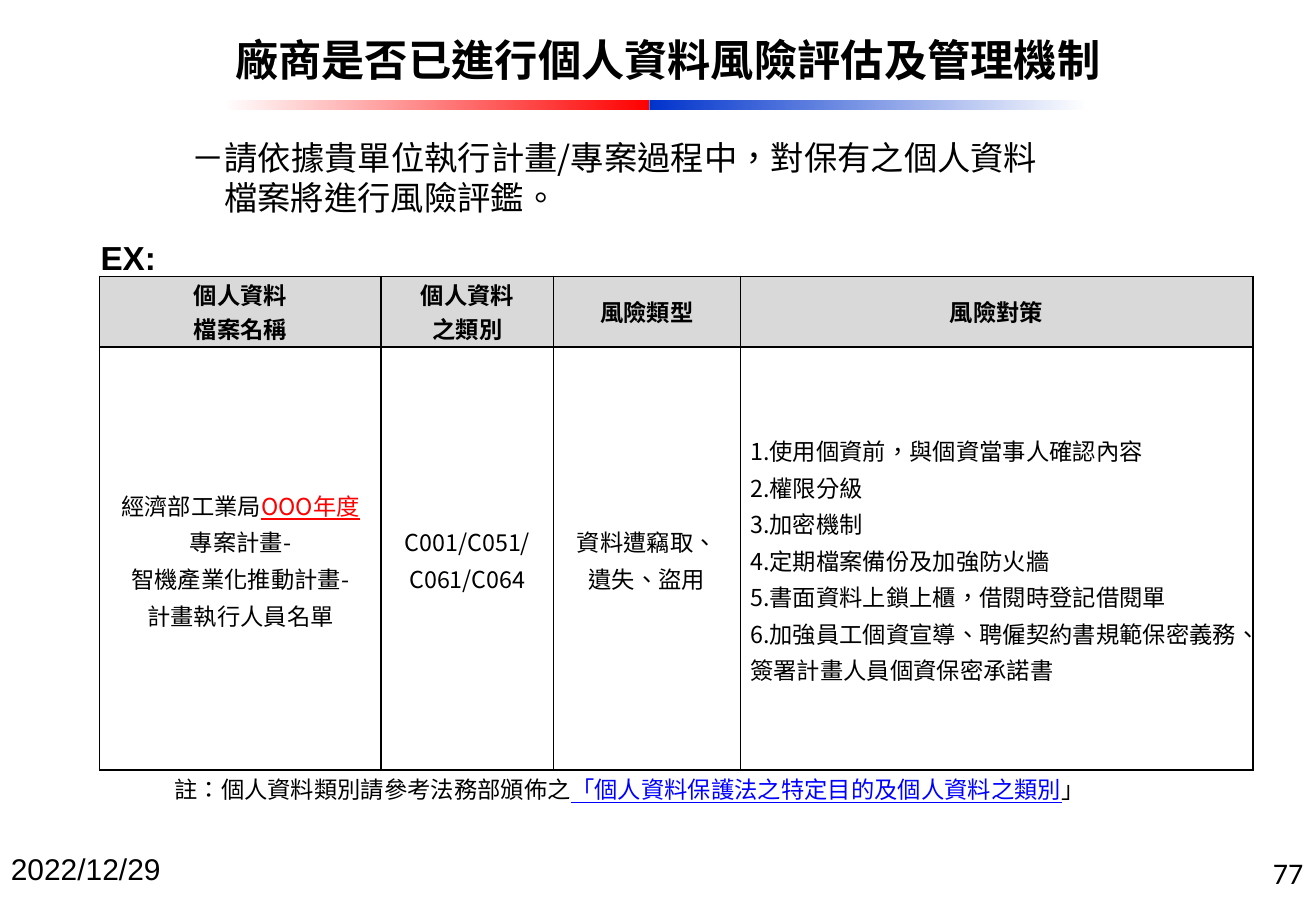
from lxml import etree
from pptx import Presentation
from pptx.dml.color import RGBColor
from pptx.enum.shapes import MSO_SHAPE
from pptx.enum.text import MSO_ANCHOR, PP_ALIGN
from pptx.oxml.ns import qn
from pptx.util import Pt

PX = 7620  # EMU per px, 120 px to the inch
BLACK = RGBColor(0x00, 0x00, 0x00)
WHITE = RGBColor(0xFF, 0xFF, 0xFF)
RED = RGBColor(0xFF, 0x00, 0x00)
NAVY = RGBColor(0x00, 0x33, 0xCC)
BLUE = RGBColor(0x00, 0x00, 0xFF)
GREY = RGBColor(0xD9, 0xD9, 0xD9)
LEFT, MID, RIGHT = PP_ALIGN.LEFT, PP_ALIGN.CENTER, PP_ALIGN.RIGHT
CENTER = MSO_ANCHOR.MIDDLE
RECT = MSO_SHAPE.RECTANGLE
CJK, ARIAL, CALIBRI = "Noto Sans CJK SC", "Arial", "Calibri"

HEAD = [["個人資料", "檔案名稱"], ["個人資料", "之類別"], ["風險類型"], ["風險對策"]]
BODY = [
    [["經濟部工業局", ("OOO年度", RED)], "專案計畫-", "智機產業化推動計畫-", "計畫執行人員名單"],
    ["C001/C051/", "C061/C064"],
    ["資料遭竊取、", "遺失、盜用"],
    ["1.使用個資前，與個資當事人確認內容", "2.權限分級", "3.加密機制",
     "4.定期檔案備份及加強防火牆", "5.書面資料上鎖上櫃，借閱時登記借閱單",
     "6.加強員工個資宣導、聘僱契約書規範保密義務、簽署計畫人員個資保密承諾書"],
]
COLS = [282, 173, 187, 514]
ROWS = [71, 424]


def write(frame, lines, size, face=CJK, bold=False, align=LEFT, lead=None, dents=()):
    """Each line is a string or a list of runs; a (text, colour) run is underlined."""
    frame.word_wrap = True
    for i, line in enumerate(lines):
        para = frame.paragraphs[0] if i == 0 else frame.add_paragraph()
        para.alignment = align
        if lead:
            para.line_spacing = lead
        if dents:
            para._p.get_or_add_pPr().set("marL", str(dents[i] * PX))
        for part in [line] if isinstance(line, str) else line:
            text, tint = (part, None) if isinstance(part, str) else part
            run = para.add_run()
            run.text = text
            font = run.font
            font.size, font.name, font.bold = Pt(size), face, bold
            font.color.rgb = tint or BLACK
            font.underline = tint is not None
            if face == CJK:
                props = run._r.get_or_add_rPr()
                props.set("lang", "zh-TW")
                east = etree.SubElement(props, qn("a:ea"))
                east.set("typeface", face)


def label(slide, box, lines, size, **style):
    shape = slide.shapes.add_textbox(*[n * PX for n in box])
    write(shape.text_frame, lines, size, **style)


def title(slide, box):
    x, y, w, h = box
    label(slide, (x, y, w, h), ["廠商是否已進行個人資料風險評估及管理機制"], 26,
          bold=True, lead=Pt(31))
    # Two-part rule that fades out at both ends
    top, tall, join = y + 72, 10, x + 427
    for left, wide, start, end in ((join - 428, 428, WHITE, RED),
                                   (join, 439, NAVY, WHITE)):
        bar = slide.shapes.add_shape(RECT, left * PX, top * PX, wide * PX, tall * PX)
        bar.shadow.inherit = False
        bar.line.fill.background()
        bar.fill.gradient()
        bar.fill.gradient_angle = 0
        for stop, tint in zip(bar.fill.gradient_stops, (start, end)):
            stop.color.rgb = tint


def intro(slide, box):
    x, y, w, h = box
    label(slide, (x, y, w, h), ["－請依據貴單位執行計畫/專案過程中，對保有之個人資料",
                                "檔案將進行風險評鑑。"], 20, lead=Pt(24), dents=(60, 93))
    label(slide, (x - 31, y + 100, 120, 45), ["EX:"], 20, face=ARIAL, bold=True)


def edge(cell):
    props = cell._tc.get_or_add_tcPr()
    for i, side in enumerate(("lnL", "lnR", "lnT", "lnB")):
        line = etree.Element(qn("a:" + side), w=str(Pt(1)))
        fill = etree.SubElement(line, qn("a:solidFill"))
        etree.SubElement(fill, qn("a:srgbClr"), val=str(BLACK))
        props.insert(i, line)


def risks(slide, box):
    x, y = box
    grid = slide.shapes.add_table(2, len(COLS), x * PX, y * PX,
                                  sum(COLS) * PX, sum(ROWS) * PX).table
    for col, wide in zip(grid.columns, COLS):
        col.width = wide * PX
    for row, tall in zip(grid.rows, ROWS):
        row.height = tall * PX
    for r, texts in enumerate((HEAD, BODY)):
        for c, lines in enumerate(texts):
            cell = grid.cell(r, c)
            cell.fill.solid()
            cell.fill.fore_color.rgb = WHITE if r else GREY
            cell.vertical_anchor = CENTER
            cell.margin_left = cell.margin_right = 10 * PX
            cell.margin_top = cell.margin_bottom = 0
            write(cell.text_frame, lines, 14, bold=r == 0,
                  align=LEFT if r and c == 3 else MID, lead=Pt(22 if r else 20))
            edge(cell)
    # Note under the table
    label(slide, (x + 63, y + sum(ROWS) - 1, 1026, 41),
          [["註：個人資料類別請參考法務部頒佈之",
            ("「個人資料保護法之特定目的及個人資料之類別", BLUE), "」"]],
          14, lead=Pt(17))


def footer(slide, box):
    x, y, w, h = box
    label(slide, (x, y, 253, h), ["2022/12/29"], 18, face=ARIAL)
    label(slide, (x + w - 253, y + 4, 253, h), ["77"], 18, face=CALIBRI, align=RIGHT)


def main():
    deck = Presentation()
    deck.slide_width, deck.slide_height = 1319 * PX, 900 * PX
    slide = deck.slides.add_slide(deck.slide_layouts[6])
    title(slide, (224, 28, 1012, 65))
    intro(slide, (120, 132, 1044, 92))
    # EX: sits clear above the table
    risks(slide, (100, 277))
    footer(slide, (-1, 847, 1319, 49))
    deck.save("out.pptx")


if __name__ == "__main__":
    main()
